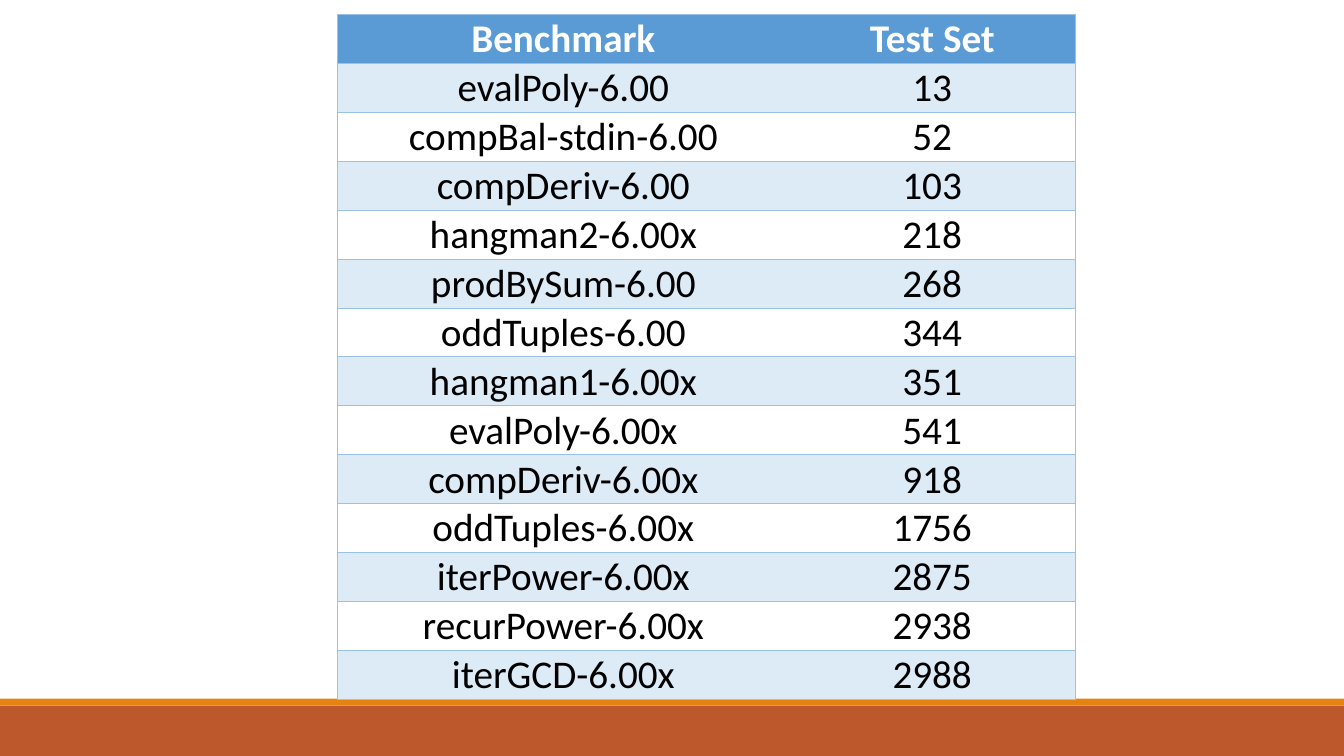
import pptx
import pptx.util
import pptx.dml.color
import pptx.enum.shapes
import pptx.enum.text
import pptx.oxml
import pptx.oxml.ns

Pt = pptx.util.Pt

RESULTS = [
    ("Benchmark", "Test Set"),
    ("evalPoly-6.00", "13"),
    ("compBal-stdin-6.00", "52"),
    ("compDeriv-6.00", "103"),
    ("hangman2-6.00x", "218"),
    ("prodBySum-6.00", "268"),
    ("oddTuples-6.00", "344"),
    ("hangman1-6.00x", "351"),
    ("evalPoly-6.00x", "541"),
    ("compDeriv-6.00x", "918"),
    ("oddTuples-6.00x", "1756"),
    ("iterPower-6.00x", "2875"),
    ("recurPower-6.00x", "2938"),
    ("iterGCD-6.00x", "2988"),
]


def rgb(code):
    return pptx.dml.color.RGBColor.from_string(code)


def apply(target, values):
    for name, value in values.items():
        setattr(target, name, value)


class BenchmarkSlide:
    """Draws styled bars and tables on one slide."""

    header_fill, band_fill, rule = "5B9BD5", "DDEBF7", "9BC2E6"
    font = {"name": "Calibri", "size": Pt(28)}
    cell_format = {
        "margin_left": Pt(0.72),
        "margin_right": Pt(0.72),
        "margin_top": Pt(0.72),
        "margin_bottom": Pt(0),
        "vertical_anchor": pptx.enum.text.MSO_ANCHOR.BOTTOM,
    }
    plain_table = {"first_row": False, "horz_banding": False}

    def __init__(self, slide):
        self.slide = slide

    def bar(self, left, top, width, height, color):
        bar = self.slide.shapes.add_shape(
            pptx.enum.shapes.MSO_SHAPE.RECTANGLE,
            Pt(left), Pt(top), Pt(width), Pt(height))
        bar.shadow.inherit = False
        bar.fill.solid()
        bar.fill.fore_color.rgb = rgb(color)
        bar.line.fill.background()

    def borders(self, cell, ruled_sides):
        properties = cell._tc.get_or_add_tcPr()
        for side in "LRTB":
            paint = (f'<a:solidFill><a:srgbClr val="{self.rule}"/></a:solidFill>'
                     if side in ruled_sides else "<a:noFill/>")
            properties.append(pptx.oxml.parse_xml(
                f'<a:ln{side} {pptx.oxml.ns.nsdecls("a")} w="{Pt(0.5)}">'
                f"{paint}</a:ln{side}>"))

    def cell(self, cell, text, row, ruled_sides):
        apply(cell, self.cell_format)
        self.borders(cell, ruled_sides)
        if row % 2 or row == 0:
            cell.fill.solid()
            cell.fill.fore_color.rgb = rgb(self.band_fill if row else self.header_fill)
        else:
            cell.fill.background()
        cell.text = text
        paragraph = cell.text_frame.paragraphs[0]
        paragraph.alignment = pptx.enum.text.PP_ALIGN.CENTER
        font = paragraph.runs[0].font
        apply(font, {**self.font, "bold": row == 0})
        font.color.rgb = rgb("000000" if row else "FFFFFF")

    def table(self, left, top, widths, height, row_height, rows):
        frame = self.slide.shapes.add_table(
            len(rows), len(widths),
            Pt(left), Pt(top), Pt(sum(widths)), Pt(height))
        table = frame.table
        apply(table, self.plain_table)
        for column, width in zip(table.columns, widths):
            column.width = Pt(width)
        for row, values in enumerate(rows):
            table.rows[row].height = Pt(row_height)
            for column, text in enumerate(values):
                self.cell(table.cell(row, column), text, row,
                          "RTB" if column else "LTB")
        frame.height = Pt(height)


def main():
    deck = pptx.Presentation()
    apply(deck, {"slide_width": Pt(960), "slide_height": Pt(540)})
    page = BenchmarkSlide(deck.slides.add_slide(deck.slide_layouts[6]))
    page.bar(0, 504, 960, 36, "BD582C")
    page.bar(0, 499, 960, 5, "E48312")
    page.table(241, 10.2, [322.7, 204.3], 481, 27.36, RESULTS)
    deck.save("out.pptx")


if __name__ == "__main__":
    main()
